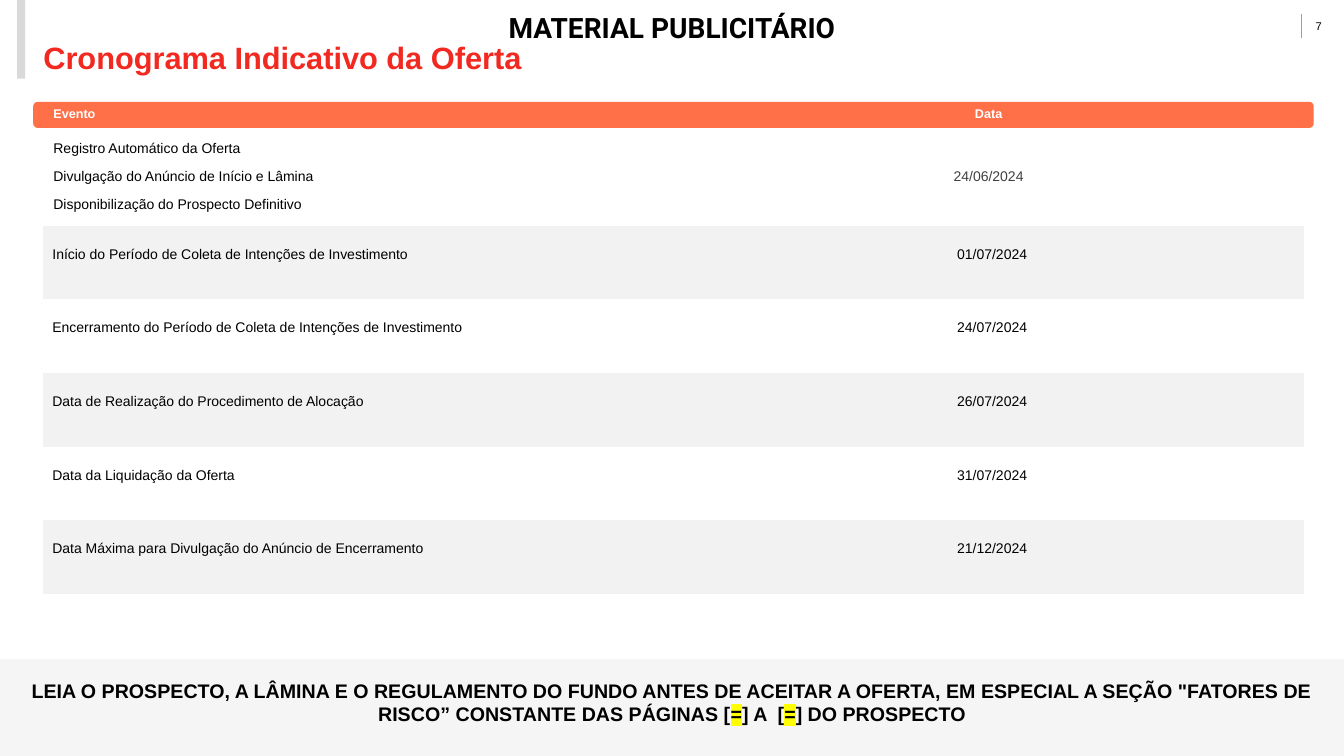
from lxml.etree import SubElement
from pptx import Presentation
from pptx.dml.color import RGBColor
from pptx.enum.shapes import MSO_CONNECTOR, MSO_SHAPE
from pptx.enum.text import MSO_ANCHOR, MSO_AUTO_SIZE, PP_ALIGN
from pptx.oxml.ns import qn
from pptx.util import Pt

PX = 9144  # 100 px to the inch
ORANGE, GREY, BLACK, WHITE = "FF7048", "F2F2F2", "000000", "FFFFFF"
NO_GRID = "{2D5ABB26-0587-4C30-8999-92F81FD0307C}"
EVENTS = [
    (["Registro Automático da Oferta",
      "Divulgação do Anúncio de Início e Lâmina",
      "Disponibilização do Prospecto Definitivo"], "24/06/2024"),
    (["Início do Período de Coleta de Intenções de Investimento"], "01/07/2024"),
    (["Encerramento do Período de Coleta de Intenções de Investimento"], "24/07/2024"),
    (["Data de Realização do Procedimento de Alocação"], "26/07/2024"),
    (["Data da Liquidação da Oferta"], "31/07/2024"),
    (["Data Máxima para Divulgação do Anúncio de Encerramento"], "21/12/2024"),
]
# Pieces of the notice; True marks highlighted text
NOTICE = [
    ("LEIA O PROSPECTO, A LÂMINA E O REGULAMENTO DO FUNDO ANTES DE ACEITAR A OFERTA, "
     "EM ESPECIAL A SEÇÃO \"FATORES DE RISCO” CONSTANTE DAS PÁGINAS [", False),
    ("=", True), ("] A  [", False), ("=", True), ("] DO PROSPECTO", False),
]


def px(*lengths):
    return [n * PX for n in lengths]


def color(value):
    return RGBColor.from_string(value)


def set_font(p, size, value=BLACK, bold=False, name="Arial"):
    p.font.size, p.font.bold, p.font.name = Pt(size), bold, name
    p.font.color.rgb = color(value)


def set_margins(target, left, top, right, bottom):
    (target.margin_left, target.margin_top,
     target.margin_right, target.margin_bottom) = px(left, top, right, bottom)


def add_block(s, kind, box, fill):
    sp = s.shapes.add_shape(kind, *px(*box))
    sp.shadow.inherit = False
    sp.fill.solid()
    sp.fill.fore_color.rgb = color(fill)
    sp.line.fill.background()
    return sp


def add_label(s, box, text, size, margins, **font):
    tf = s.shapes.add_textbox(*px(*box)).text_frame
    tf.word_wrap = True
    tf.vertical_anchor = MSO_ANCHOR.MIDDLE
    set_margins(tf, *margins)
    p = tf.paragraphs[0]
    p.text, p.alignment = text, PP_ALIGN.CENTER
    set_font(p, size, **font)


def add_header(s, left, top, width):
    # Publicity label, page number with its rule, side bar
    add_label(s, (left, top, width, 54), "MATERIAL PUBLICITÁRIO", 20,
              (10, 5, 10, 5), bold=True, name="Roboto")
    rule_x = left + width - 42
    add_label(s, (rule_x, top + 17, 34, 18), "7", 8, (0, 0, 0, 0))
    rule = s.shapes.add_connector(
        MSO_CONNECTOR.STRAIGHT, *px(rule_x, top + 14, rule_x, top + 38))
    rule.line.color.rgb = color("9E9E9E")
    rule.line.width = Pt(0.5)
    SubElement(rule._element.spPr, qn("a:effectLst"))
    add_block(s, MSO_SHAPE.RECTANGLE, (left + 17, top, 8, 78), "D9D9D9")


def place_title(s, left, top, width, height):
    sp = s.shapes.title
    sp.left, sp.top, sp.width, sp.height = px(left, top, width, height)
    tf = sp.text_frame
    tf.auto_size = MSO_AUTO_SIZE.NONE
    tf.vertical_anchor = MSO_ANCHOR.BOTTOM
    set_margins(tf, 0, 5, 10, 5)
    p = tf.paragraphs[0]
    p.text, p.alignment, p.line_spacing = "Cronograma Indicativo da Oferta", PP_ALIGN.LEFT, 0.9
    set_font(p, 22, "F22920", True)


def fill_cell(cell, lines, centred, fill, margins, size=10, value=BLACK, bold=False):
    cell.vertical_anchor = MSO_ANCHOR.MIDDLE
    set_margins(cell, *margins)
    if fill:
        cell.fill.solid()
        cell.fill.fore_color.rgb = color(fill)
    else:
        cell.fill.background()
    tf = cell.text_frame
    for i, line in enumerate(lines):
        p = tf.add_paragraph() if i else tf.paragraphs[0]
        p.text = line
        p.alignment = PP_ALIGN.CENTER if centred else PP_ALIGN.LEFT
        if len(lines) > 1:
            p.line_spacing = 1.07
            p.space_before, p.space_after = Pt(5 if i else 0), Pt(3)
        set_font(p, size, value, bold)


def add_schedule(s, left, top, width, height):
    # Rounded band behind the heading row
    add_block(s, MSO_SHAPE.ROUNDED_RECTANGLE, (left - 10, top, width + 20, 26), ORANGE)
    table = s.shapes.add_table(len(EVENTS) + 1, 2, *px(left, top, width, height)).table
    table.first_row = table.horz_banding = False
    table._tbl.tblPr.find(qn("a:tableStyleId")).text = NO_GRID
    heights = [24, 98] + [73] * (len(EVENTS) - 1)
    for row, row_height in zip(table.rows, heights):
        row.height = row_height * PX
    for column in table.columns:
        column.width = width * PX // 2

    # Heading row, then one row per event
    for c, heading in enumerate(("Evento", "Data")):
        fill_cell(table.cell(0, c), [heading], c == 1, ORANGE, (10, 5, 10, 5), 9, WHITE, True)
    for r, (names, date) in enumerate(EVENTS, 1):
        fill = None if r % 2 else GREY
        margins = (10, 5, 10, 5) if r == 1 else (9, 3, 2, 19)
        fill_cell(table.cell(r, 0), names, False, fill, margins)
        fill_cell(table.cell(r, 1), [date], True, fill, margins,
                  value="404040" if r == 1 else BLACK)


def add_notice(s, left, top, width, height):
    tf = add_block(s, MSO_SHAPE.RECTANGLE, (left, top, width, height), "F5F5F5").text_frame
    tf.word_wrap = True
    tf.vertical_anchor = MSO_ANCHOR.MIDDLE
    set_margins(tf, 10, 5, 10, 16)
    p = tf.paragraphs[0]
    p.alignment = PP_ALIGN.CENTER
    for text, marked in NOTICE:
        r = p.add_run()
        r.text = text
        if marked:
            highlight = SubElement(r._r.get_or_add_rPr(), qn("a:highlight"))
            SubElement(highlight, qn("a:srgbClr"), val="FFFF00")
    set_font(p, 14, bold=True)


def main():
    prs = Presentation()
    prs.slide_width, prs.slide_height = px(1333, 750)
    s = prs.slides.add_slide(prs.slide_layouts[5])
    add_header(s, 0, 0, 1333)
    add_schedule(s, 43, 101, 1250, 487)
    place_title(s, 43, 38, 1249, 43)
    add_notice(s, 0, 654, 1333, 96)
    prs.save("out.pptx")


if __name__ == "__main__":
    main()
